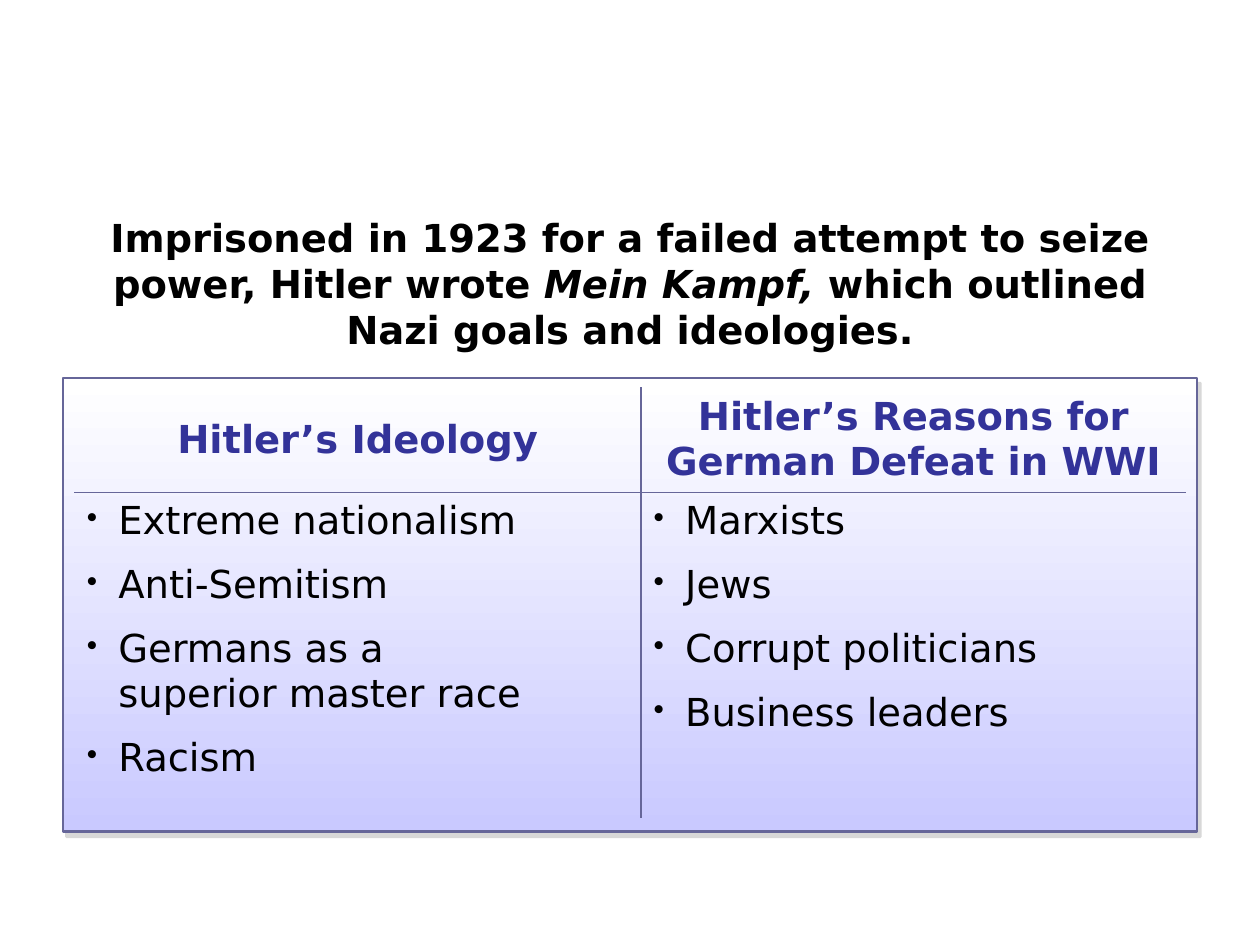
from dataclasses import dataclass
from pptx import Presentation
from pptx.dml.color import RGBColor
from pptx.enum.shapes import MSO_SHAPE
from pptx.enum.text import MSO_ANCHOR, PP_ALIGN
from pptx.oxml import parse_xml
from pptx.oxml.ns import nsdecls
from pptx.util import Inches, Pt


@dataclass(frozen=True)
class Theme:
    """Colours, font and sizes of the slide."""
    font: str = "DejaVu Sans"
    size: int = 22
    ink: str = "000000"
    head: str = "333399"
    rule: str = "666699"
    top: str = "FFFFFF"
    base: str = "C9C9FF"
    shade: str = "B2B2B2"


THEME = Theme()
WIDE, HIGH = Inches(10), Inches(7.5)
INTRO = [
    ("Imprisoned in 1923 for a failed attempt to seize power, Hitler wrote ", False),
    ("Mein Kampf, ", True),
    ("which outlined Nazi goals and ideologies.", False),
]
LISTS = {
    "Hitler’s Ideology": [
        "Extreme nationalism", "Anti-Semitism",
        "Germans as a \vsuperior master race", "Racism"],
    "Hitler’s Reasons for German Defeat in WWI": [
        "Marxists", "Jews", "Corrupt politicians", "Business leaders"],
}


def apply(item, **values):
    """Set each named attribute on the item."""
    for name, value in values.items():
        setattr(item, name, value)


def style(font, tint, **values):
    """Give a font the theme's face and size, and a colour."""
    apply(font, name=THEME.font, size=Pt(THEME.size), **values)
    font.color.rgb = RGBColor.from_string(tint)


def node(xml):
    """Make a drawing element from text that lacks its namespace."""
    tag, rest = xml.split(" ", 1)
    return parse_xml(f"{tag} {nsdecls('a')} {rest}")


def share(box, x, y, w, h):
    """Return the part of a box given by shares of its size."""
    left, top, wide, high = box
    return (int(left + x * wide), int(top + y * high), int(w * wide), int(h * high))


def intro(slide, box):
    """Write the centred opening sentence."""
    frame = slide.shapes.add_textbox(*box).text_frame
    frame.word_wrap = True
    para = frame.paragraphs[0]
    para.alignment = PP_ALIGN.CENTER
    for text, slant in INTRO:
        run = para.add_run()
        run.text = text
        style(run.font, THEME.ink, bold=True, italic=slant)


def panel(slide, box):
    """Draw the shaded panel with its hard shadow."""
    shape = slide.shapes.add_shape(MSO_SHAPE.RECTANGLE, *box)
    shape.shadow.inherit = False
    shape.fill.gradient()
    shape.fill.gradient_angle = 270
    for stop, tint in zip(shape.fill.gradient_stops, (THEME.top, THEME.base)):
        stop.color.rgb = RGBColor.from_string(tint)
    shape.line.color.rgb = RGBColor.from_string(THEME.rule)
    shape.line.width = Pt(1.5)
    shape._element.spPr.find("{*}effectLst").append(node(
        f'<a:outerShdw blurRad="0" dist="{Pt(3.6)}" dir="{56 * 60000}">'
        f'<a:srgbClr val="{THEME.shade}"><a:alpha val="50000"/></a:srgbClr>'
        '</a:outerShdw>'))


def edge(cell, sides):
    """Rule the named sides of a cell and clear the rest."""
    props = cell._tc.get_or_add_tcPr()
    for side in "LRTB":
        fill = (f'<a:solidFill><a:srgbClr val="{THEME.rule}"/></a:solidFill>'
                if side in sides else "<a:noFill/>")
        props.append(node(f'<a:ln{side} w="{Pt(1)}">{fill}</a:ln{side}>'))
    cell.fill.background()


def header(cell, text):
    """Write a column heading."""
    cell.vertical_anchor = MSO_ANCHOR.MIDDLE
    para = cell.text_frame.paragraphs[0]
    para.text = text
    apply(para, alignment=PP_ALIGN.CENTER, space_before=Pt(THEME.size * 0.2))
    style(para.runs[0].font, THEME.head, bold=True)


def bullets(cell, lines):
    """Write a bulleted list in a cell."""
    frame = cell.text_frame
    for index, line in enumerate(lines):
        para = frame.add_paragraph() if index else frame.paragraphs[0]
        para.text = line
        para.space_after = Pt(THEME.size * 0.5)
        for run in para.runs:
            style(run.font, THEME.ink, bold=False)
        props = para._p.get_or_add_pPr()
        props.set("marL", str(Inches(0.25)))
        props.set("indent", str(-Inches(0.25)))
        props.append(node('<a:buSzPct val="80000"/>'))
        props.append(node('<a:buChar char="•"/>'))


def grid(slide, box):
    """Lay out the two headed lists as a ruled table."""
    table = slide.shapes.add_table(2, len(LISTS), *box).table
    apply(table, first_row=False, horz_banding=False)
    for col, part in zip(table.columns, (0.51, 0.49)):
        col.width = int(box[2] * part)
    for row, part in zip(table.rows, (0.245, 0.755)):
        row.height = int(box[3] * part)
    for col, (title, lines) in enumerate(LISTS.items()):
        side = "L" if col else "R"
        top, low = table.cell(0, col), table.cell(1, col)
        edge(top, side + "B")
        edge(low, side + "T")
        header(top, title)
        bullets(low, lines)


def main():
    """Build and save the slide."""
    deck = Presentation()
    apply(deck, slide_width=WIDE, slide_height=HIGH)
    slide = deck.slides.add_slide(deck.slide_layouts[6])
    page = (0, 0, WIDE, HIGH)
    intro(slide, share(page, 0.05, 0.22, 0.9, 0.16))
    frame = share(page, 0.05, 0.4, 0.9, 0.48)
    panel(slide, frame)
    grid(slide, share(frame, 0.01, 0.02, 0.98, 0.95))
    deck.save("out.pptx")


if __name__ == "__main__":
    main()
